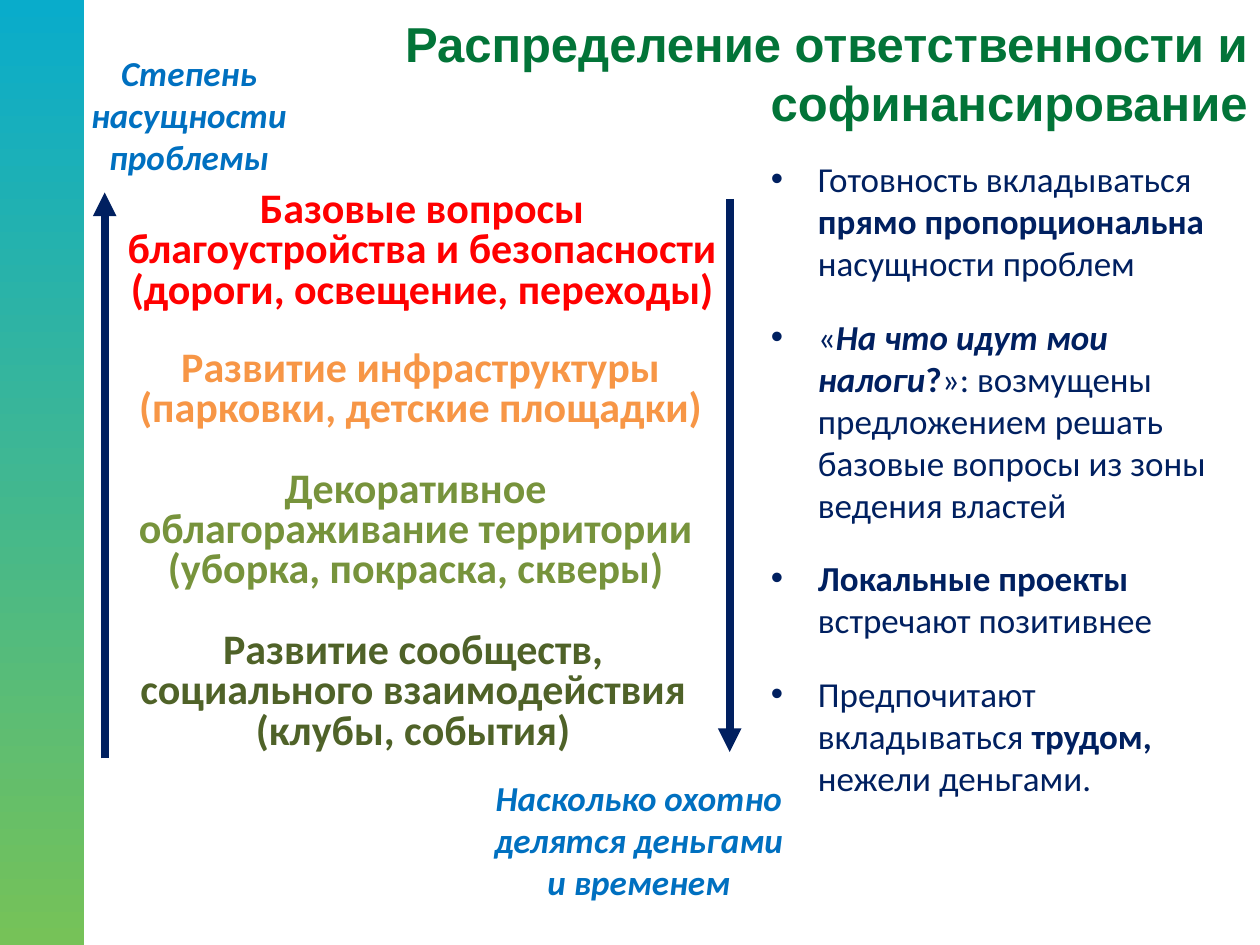
import pptx
import pptx.util
import pptx.dml.color
import pptx.enum.shapes
import pptx.enum.text
import pptx.oxml
import pptx.oxml.ns
from lxml import etree

Cm, Pt = pptx.util.Cm, pptx.util.Pt
ALIGN = pptx.enum.text.PP_ALIGN
ANCHOR = pptx.enum.text.MSO_ANCHOR

COLORS = {
    "title": "027438",
    "band_top": "09ACCB",
    "band_bottom": "76C258",
    "navy": "002060",
    "caption": "0070C0",
    "basic": "FF0000",
    "infrastructure": "F79646",
    "decor": "77933C",
    "community": "4F6228",
}

LEVELS = [
    ("basic", 0.48, 2.78, 12.4,
     ["Базовые вопросы благоустройства и безопасности ", "(дороги, освещение, переходы)"]),
    ("infrastructure", 0.63, 5.98, 12.04,
     ["Развитие инфраструктуры (парковки, детские площадки)"]),
    ("decor", 0.53, 8.42, 12.04,
     ["Декоративное облагораживание территории (уборка, покраска, скверы)"]),
    ("community", 0.48, 11.67, 12.04,
     ["Развитие сообществ, социального взаимодействия (клубы, события)"]),
]

BULLETS = [
    [("Готовность вкладываться ", ""), ("прямо пропорциональна", "b"), (" насущности проблем", "")],
    [("«", ""), ("На что идут мои налоги", "bi"), ("?", "b"),
     ("»: возмущены предложением решать базовые вопросы из зоны ведения властей", "")],
    [("Локальные проекты ", "b"), ("встречают позитивнее", "")],
    [("Предпочитают вкладываться ", ""), ("трудом,", "b"), (" нежели деньгами.", "")],
]


def rgb(name):
    return pptx.dml.color.RGBColor.from_string(COLORS[name])


def style_run(r, size, color, bold=True, italic=False, font="Calibri"):
    r.font.name = font
    r.font.size = Pt(size)
    r.font.bold = bold
    r.font.italic = italic
    r.font.color.rgb = rgb(color)


def add_text_box(s, x, y, w, h, inset=0.25):
    tf = s.shapes.add_textbox(Cm(x), Cm(y), Cm(w), Cm(h)).text_frame
    tf.word_wrap = True
    tf.margin_left = tf.margin_right = Cm(inset)
    return tf


def add_arrow(s, x, y1, y2):
    c = s.shapes.add_connector(
        pptx.enum.shapes.MSO_CONNECTOR.STRAIGHT, Cm(x), Cm(y1), Cm(x), Cm(y2))
    c.line.color.rgb = rgb("navy")
    c.line.width = Pt(4.5)
    qn = pptx.oxml.ns.qn
    etree.SubElement(c.line._get_or_add_ln(), qn("a:tailEnd"), type="triangle")
    etree.SubElement(c._element.spPr, qn("a:effectLst"))


def add_caption(s, x, y, w, h, text):
    tf = add_text_box(s, x, y, w, h)
    tf.text = text
    p = tf.paragraphs[0]
    p.alignment = ALIGN.CENTER
    p.space_before = Pt(4)
    style_run(p.runs[0], 20, "caption", italic=True)


def side_band(s, x, y, w, h):
    sp = s.shapes.add_shape(
        pptx.enum.shapes.MSO_SHAPE.RECTANGLE, Cm(x), Cm(y), Cm(w), Cm(h))
    sp.shadow.inherit = False
    sp.line.fill.background()
    sp.fill.gradient()
    sp.fill.gradient_angle = 270
    for stop, position, name in zip(sp.fill.gradient_stops, (0, 1), ("band_top", "band_bottom")):
        stop.position = position
        stop.color.rgb = rgb(name)


def title(s, x, y, w, h):
    tf = add_text_box(s, x, y, w, h)
    tf.vertical_anchor = ANCHOR.MIDDLE
    tf.text = "Распределение ответственности и софинансирование"
    p = tf.paragraphs[0]
    p.alignment = ALIGN.RIGHT
    style_run(p.runs[0], 28, "title", font="Arial")


def problem_scale(s, x, y, w, h):
    add_arrow(s, x + 1.02, y + 14.38, y + 2.97)
    add_arrow(s, x + w - 1.55, y + 3.1, y + 14.25)
    add_caption(s, x, y, 5.44, 1.37, "Степень насущности проблемы")
    add_caption(s, x + w - 6.76, y + h - 2.92, 6.76, 2.92,
                "Насколько охотно делятся деньгами и временем")
    for color, dx, dy, width, lines in LEVELS:
        tf = add_text_box(s, x + 0.75 + dx - 0.01, y + dy + 0.04, width, 1.7, inset=0.2)
        tf.text = "\n".join(lines)
        for p in tf.paragraphs:
            p.alignment = ALIGN.CENTER
            p.line_spacing = 0.8
            style_run(p.runs[0], 24, color)


def conclusions(s, x, y, w, h):
    tf = add_text_box(s, x, y, w, h)
    for i, parts in enumerate(BULLETS):
        p = tf.add_paragraph() if i else tf.paragraphs[0]
        p.space_before = Pt(18)
        pPr = p._p.get_or_add_pPr()
        pPr.set("marL", str(Cm(0.95)))
        pPr.set("indent", str(-Cm(0.95)))
        qn = pptx.oxml.ns.qn
        color = etree.SubElement(pPr, qn("a:buClr"))
        etree.SubElement(color, qn("a:srgbClr"), val=COLORS["navy"])
        etree.SubElement(pPr, qn("a:buFont"), typeface="Arial")
        etree.SubElement(pPr, qn("a:buChar"), char="•")
        for text, marks in parts:
            r = p.add_run()
            r.text = text
            style_run(r, 20, "navy", "b" in marks, "i" in marks)


def main():
    prs = pptx.Presentation()
    prs.slide_width, prs.slide_height = Cm(25.4), Cm(19.05)
    s = prs.slides.add_slide(prs.slide_layouts[6])
    side_band(s, 0, 0, 1.7, 19.05)
    title(s, 5.21, 0, 20.19, 2.92)
    problem_scale(s, 1.09, 0.91, 15.17, 17.53)
    conclusions(s, 15.29, 3.05, 9.4, 15.29)
    prs.save("out.pptx")


if __name__ == "__main__":
    main()
